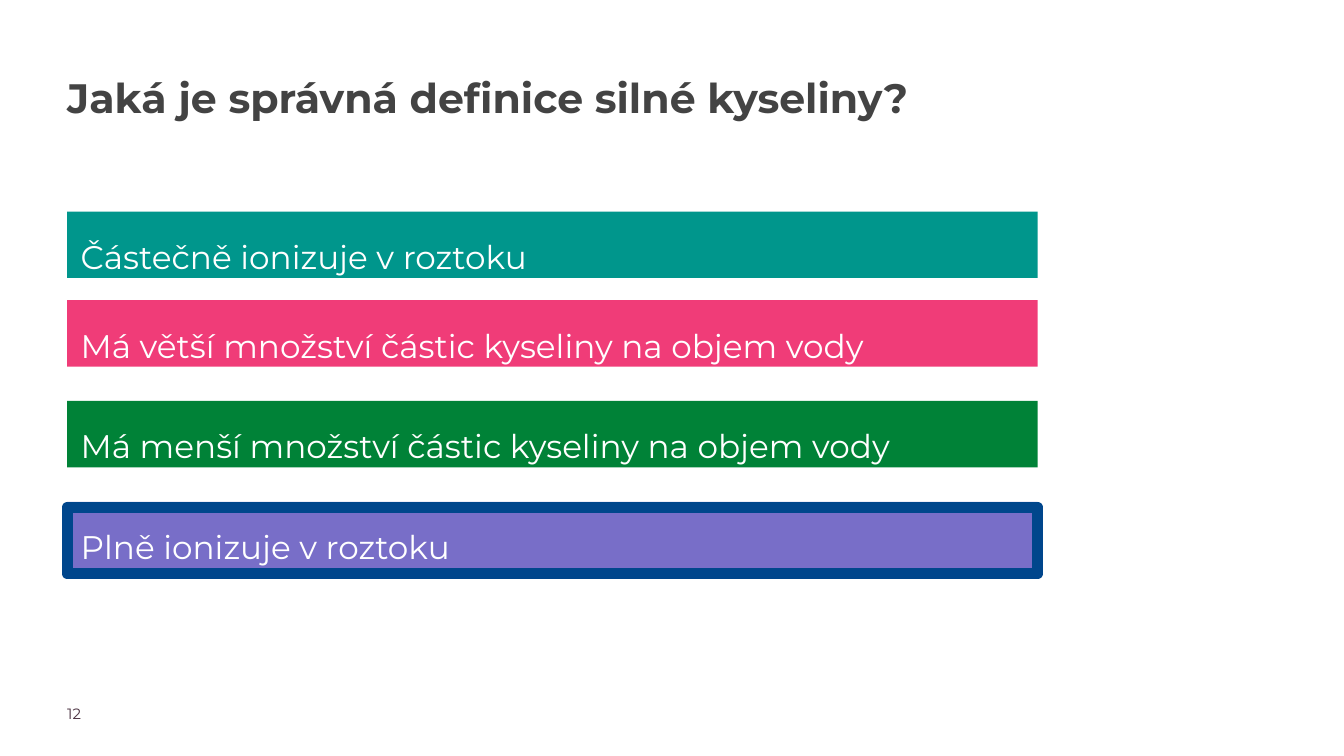
"""Build a quiz slide about the definition of a strong acid."""
from pptx import Presentation
from pptx.dml.color import RGBColor
from pptx.enum.shapes import MSO_SHAPE
from pptx.enum.text import MSO_ANCHOR, MSO_AUTO_SIZE, PP_ALIGN
from pptx.util import Cm, Pt

RECT = MSO_SHAPE.RECTANGLE
TOP = MSO_ANCHOR.TOP
NO_FIT = MSO_AUTO_SIZE.NONE
LEFT = PP_ALIGN.LEFT

WHITE = RGBColor(0xFF, 0xFF, 0xFF)
GREY = RGBColor(0x43, 0x43, 0x43)
PLUM = RGBColor(0x4B, 0x32, 0x41)
TEAL = RGBColor(0x00, 0x96, 0x8C)
PINK = RGBColor(0xF0, 0x3C, 0x78)
GREEN = RGBColor(0x00, 0x82, 0x37)
VIOLET = RGBColor(0x78, 0x6E, 0xC8)
BLUE = RGBColor(0x00, 0x46, 0x8C)

FONT = "Montserrat"
MARGIN = Cm(2.54)
WIDTH = Cm(36.68)
BAR_HEIGHT = Cm(2.51)


def write(sp, text, size, color, bold=False, inset=Cm(0), spacing=1.0):
    tf = sp.text_frame
    tf.word_wrap = True
    tf.auto_size = NO_FIT
    tf.vertical_anchor = TOP
    tf.margin_left = tf.margin_right = tf.margin_top = tf.margin_bottom = inset
    p = tf.paragraphs[0]
    p.alignment = LEFT
    p.line_spacing = spacing
    p.space_before = Pt(0)
    r = p.add_run()
    r.text = text
    r.font.name = FONT
    r.font.size = Pt(size)
    r.font.bold = bold
    r.font.color.rgb = color


prs = Presentation()
prs.slide_width = Cm(50.8)
prs.slide_height = Cm(28.58)
s = prs.slides.add_slide(prs.slide_layouts[5])

title = s.shapes.title
title.left, title.top, title.width, title.height = MARGIN, Cm(2.46), WIDTH, Cm(4.52)
write(title, "Jaká je správná definice silné kyseliny?", size=44, color=GREY,
      bold=True, spacing=1.15)

answers = [
    ("Částečně ionizuje v roztoku", TEAL, 8),
    ("Má větší množství částic kyseliny na objem vody", PINK, 11.35),
    ("Má menší množství částic kyseliny na objem vody", GREEN, 15.16),
    ("Plně ionizuje v roztoku", VIOLET, 18.97),
]
for text, color, top in answers:
    bar = s.shapes.add_shape(RECT, MARGIN, Cm(top), WIDTH, BAR_HEIGHT)
    bar.shadow.inherit = False
    bar.fill.solid()
    bar.fill.fore_color.rgb = color
    bar.line.fill.background()
    write(bar, text, size=35, color=WHITE, inset=Cm(0.51), spacing=1.3)

number = s.shapes.add_textbox(MARGIN, Cm(26.62), Cm(3.99), Cm(0.99))
write(number, "12", size=16, color=PLUM)

frame = s.shapes.add_shape(RECT, MARGIN, Cm(19.18), WIDTH, BAR_HEIGHT)
frame.shadow.inherit = False
frame.fill.background()
frame.line.color.rgb = BLUE
frame.line.width = Pt(12)

prs.save("out.pptx")
